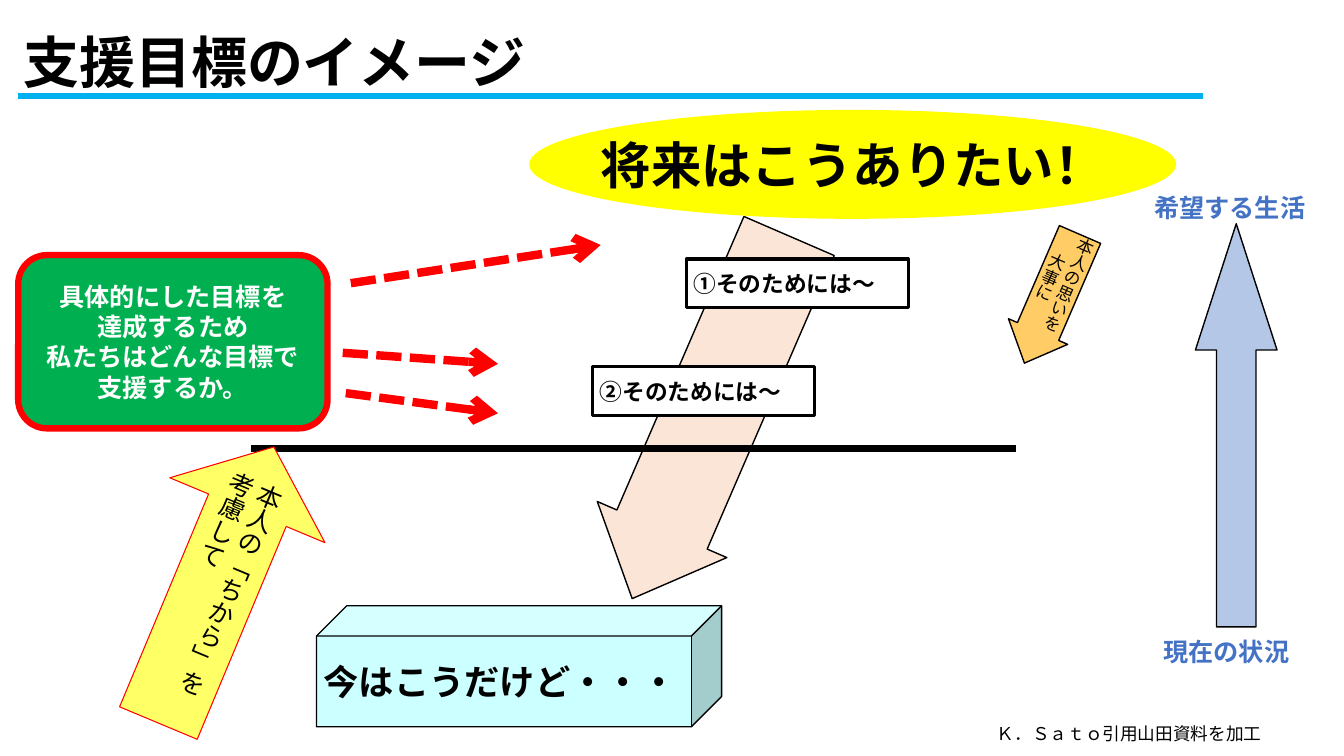
import pptx
import pptx.util
import pptx.dml.color
import pptx.oxml.ns
from pptx.enum.dml import MSO_LINE
from pptx.enum.shapes import MSO_CONNECTOR, MSO_SHAPE
from pptx.enum.text import MSO_ANCHOR, MSO_AUTO_SIZE, PP_ALIGN
from lxml import etree

Pt = pptx.util.Pt
qn = pptx.oxml.ns.qn
FONT = "Noto Sans CJK JP"
BLACK, RED, BLUE = "000000", "FF0000", "4472C4"
TIGHT = (5, 0.7)

# Content: boxes are left, top, width, height in points
TITLE = ("支援目標のイメージ", (9.4, 9.4, 828, 74.9))
STEP_SIZE = (158.4, 34.6)
STEPS = [("①そのためには～", (490.3, 185)), ("②そのためには～", (423.4, 262.1))]
LABELS = [  # lines, box, text format
    (["現在の状況"], (815.8, 453.6, 120.2, 23),
     dict(size=18, color=BLUE, bold=True, align=PP_ALIGN.CENTER, inset=TIGHT)),
    (["希望する生活"], (819.4, 136.8, 120.2, 23),
     dict(size=18, color=BLUE, bold=True, inset=TIGHT)),
    (["Ｋ．Ｓａｔｏ引用山田資料を加工"], (704.9, 512.6, 231.1, 23),
     dict(size=12.6, before=6.3)),
]
RULES = [((179.3, 320.4), (725.8, 320.4), BLACK), ((13, 68.4), (859, 68.4), "00B0F0")]
GOAL_ARROWS = [((244.8, 252), (355.7, 259.9)),
               ((250.6, 202.3), (429.1, 175)),
               ((247, 280.8), (355.7, 295.2))]
GOAL = ["具体的にした目標を", "達成するため", "私たちはどんな目標で支援するか。"]


def rgb(color):
    return pptx.dml.color.RGBColor.from_string(color)


def write(sp, lines, size, color=BLACK, bold=False, align=PP_ALIGN.LEFT, font=FONT,
          inset=(7.2, 3.6), anchor=MSO_ANCHOR.TOP, wrap=True, vertical=False,
          before=0, spacing=None):
    tf = sp.text_frame
    tf.word_wrap, tf.vertical_anchor = wrap, anchor
    tf.margin_left = tf.margin_right = Pt(inset[0])
    tf.margin_top = tf.margin_bottom = Pt(inset[1])
    if vertical:
        sp._element.txBody.find(qn("a:bodyPr")).set("vert", "eaVert")
    for i, text in enumerate(lines):
        p = tf.add_paragraph() if i else tf.paragraphs[0]
        p.alignment, p.space_before = align, Pt(before)
        if spacing:
            p.line_spacing = spacing
        r = p.add_run()
        r.text = text
        r.font.size, r.font.bold, r.font.name = Pt(size), bold, font
        r.font.color.rgb = rgb(color)
        latin = r.font._element.find(qn("a:latin"))
        ea = etree.Element(qn("a:ea"), typeface=FONT)
        latin.addnext(ea)


def add_block(s, kind, box, fill, line=None, width=1, rotation=0, adj=()):
    sp = s.shapes.add_shape(kind, *map(Pt, box))
    sp.shadow.inherit = False
    sp.rotation = rotation
    for i, value in enumerate(adj):
        sp.adjustments[i] = value
    sp.fill.solid()
    sp.fill.fore_color.rgb = rgb(fill)
    if line:
        sp.line.color.rgb, sp.line.width = rgb(line), Pt(width)
    else:
        sp.line.fill.background()
    return sp


def add_line(s, start, end, color, width):
    c = s.shapes.add_connector(MSO_CONNECTOR.STRAIGHT, *map(Pt, start + end))
    c.line.color.rgb, c.line.width = rgb(color), Pt(width)
    etree.SubElement(c._element.spPr, qn("a:effectLst"))
    return c


def main():
    prs = pptx.Presentation()
    prs.slide_width, prs.slide_height = Pt(960), Pt(540)
    s = prs.slides.add_slide(prs.slide_layouts[5])
    middle = dict(anchor=MSO_ANCHOR.MIDDLE, inset=TIGHT, wrap=False)

    # Title
    text, box = TITLE
    title = s.shapes.title
    title.left, title.top, title.width, title.height = map(Pt, box)
    write(title, [text], 40, bold=True, anchor=MSO_ANCHOR.MIDDLE, spacing=0.9)

    # Path from the wish down to the present, with its rules
    add_block(s, MSO_SHAPE.DOWN_ARROW, (457.2, 157, 100.8, 282.2), "FBE5D6", BLACK,
              rotation=23.4, adj=(0.697, 0.533))
    for start, end, color in RULES:
        add_line(s, start, end, color, 4.5)
    present = add_block(s, MSO_SHAPE.CUBE, (226.1, 432.7, 289.4, 86.4), "CCFFFF", BLACK,
                        adj=(0.25,))
    write(present, ["今はこうだけど・・・"], 25.2, bold=True, **middle)
    wish = add_block(s, MSO_SHAPE.OVAL, (378, 78.5, 462.2, 77.8), "FFFF00")
    write(wish, ["将来はこうありたい！"], 36, bold=True, align=PP_ALIGN.CENTER, **middle)

    # Slanted arrows with vertical text
    strength = add_block(s, MSO_SHAPE.UP_ARROW, (94.3, 311, 120.2, 213.8), "FFFF66", RED,
                         0.75, rotation=22.7, adj=(0.5, 0.408))
    write(strength, ["本人の「ちから」を", "考慮して"], 18, vertical=True, **middle)
    feeling = add_block(s, MSO_SHAPE.DOWN_ARROW, (728.6, 163.4, 46.1, 100.1), "FFCC66",
                        BLACK, rotation=23.4, adj=(0.697, 0.533))
    write(feeling, ["本人の思いを", "大事に"], 12, align=PP_ALIGN.CENTER, vertical=True,
          **middle)

    # Steps
    for text, corner in STEPS:
        step = add_block(s, MSO_SHAPE.RECTANGLE, corner + STEP_SIZE, "FFFFFF", BLACK, 2.25)
        write(step, [text], 16.2, bold=True, **middle)

    # Scale on the right and free labels
    add_block(s, MSO_SHAPE.DOWN_ARROW, (853.9, 159.8, 58.3, 288), "B4C7E7", BLACK,
              rotation=180, adj=(0.483, 1.547))
    for lines, box, style in LABELS:
        label = s.shapes.add_textbox(*map(Pt, box))
        write(label, lines, **style)
        label.text_frame.auto_size = MSO_AUTO_SIZE.SHAPE_TO_FIT_TEXT

    # Support goal and its dashed arrows
    for start, end in GOAL_ARROWS:
        c = add_line(s, start, end, RED, 6)
        c.line.dash_style = MSO_LINE.SQUARE_DOT
        etree.SubElement(c.line._get_or_add_ln(), qn("a:tailEnd"), type="arrow")
    goal = add_block(s, MSO_SHAPE.ROUNDED_RECTANGLE, (13, 182.2, 221, 123.8), "00B050",
                     RED, 4.5)
    write(goal, GOAL, 18, color="FFFFFF", bold=True, align=PP_ALIGN.CENTER,
          font="Calibri", anchor=MSO_ANCHOR.MIDDLE)

    prs.save("out.pptx")


if __name__ == "__main__":
    main()
